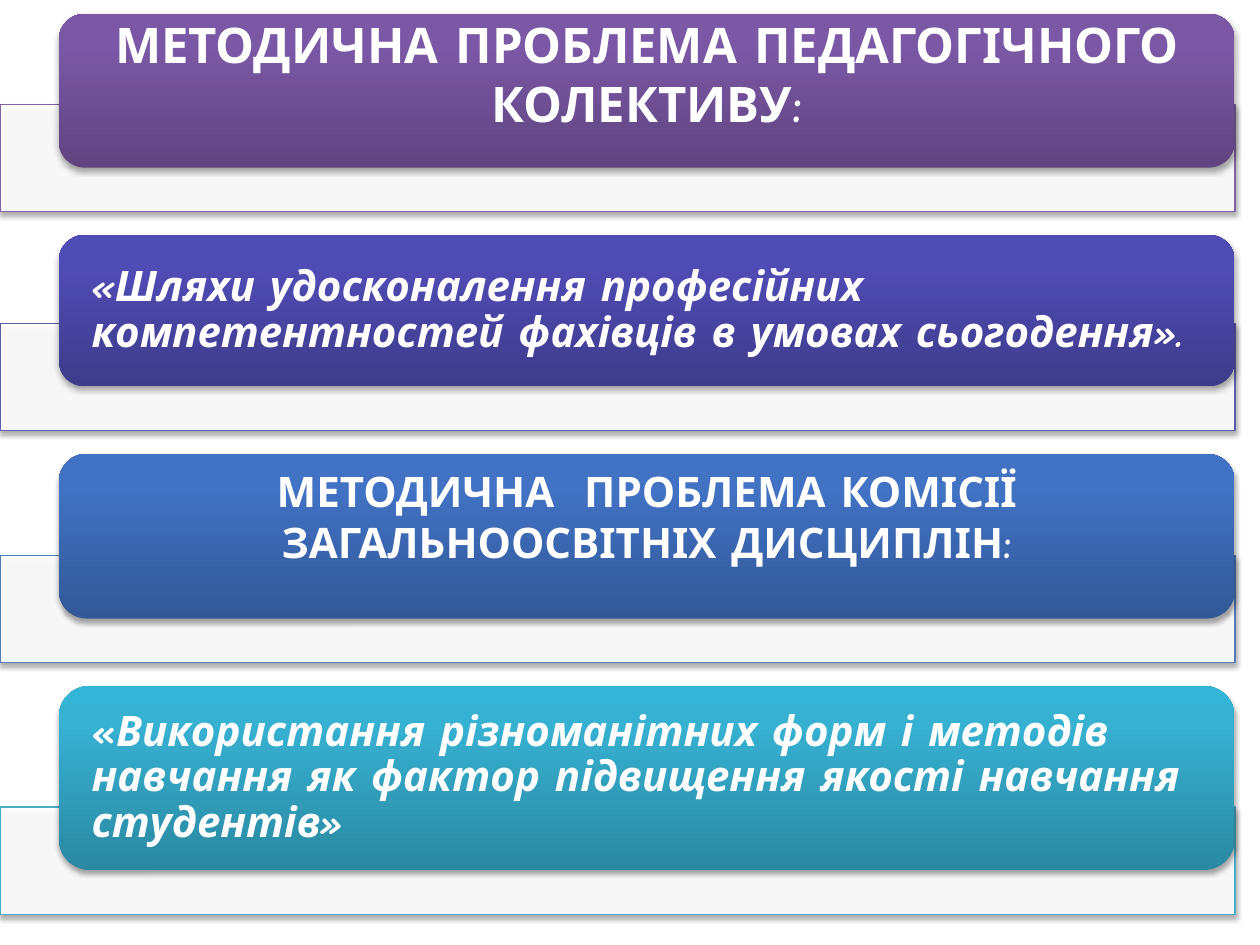
"""Build a slide of four stacked colour cards stating two methodical problems."""
from lxml.etree import SubElement
from pptx import Presentation
from pptx.dml.color import RGBColor
from pptx.enum.shapes import MSO_SHAPE
from pptx.enum.text import MSO_ANCHOR, MSO_AUTO_SIZE, PP_ALIGN
from pptx.oxml.ns import qn
from pptx.util import Cm, Pt

COLOURS = {
    "white": "FFFFFF",
    "shadow": "000000",
    "violet": ("8064A2", "5F4480", "7B58A6", "7C57A8"),
    "indigo": ("5F5BAE", "3E3B8B", "504CB5", "4F4BB8"),
    "blue": ("537ABA", "325897", "4172C4", "3F72C7"),
    "teal": ("4BACC6", "2A88A2", "37B1D2", "34B4D6"),
}
CARDS = [
    {"colour": "violet", "height": 3.1, "size": 28, "heading": True, "bottom": 0.7,
     "spans": [("МЕТОДИЧНА ПРОБЛЕМА ПЕДАГОГІЧНОГО КОЛЕКТИВУ:", False)]},
    {"colour": "indigo", "height": 3.05, "size": 24, "heading": False, "bottom": 0,
     "spans": [("«Шляхи удосконалення професійних компетентностей фахівців "
                "в умовах сьогодення».", True)]},
    {"colour": "blue", "height": 3.32, "size": 24, "heading": True, "bottom": 0.8,
     "spans": [("МЕТОДИЧНА  ПРОБЛЕМА КОМІСІЇ ЗАГАЛЬНООСВІТНІХ ДИСЦИПЛІН:", False)]},
    {"colour": "teal", "height": 3.71, "size": 24, "heading": False, "bottom": 0,
     "spans": [("«", False),
               ("Використання різноманітних форм і методів навчання як фактор "
                "підвищення якості навчання студентів»", True)]},
]
FIRST_TOP, CARD_LEFT, CARD_WIDTH = 0.28, 1.19, 23.7
BAND_WIDTH, BAND_HEIGHT, OVERLAP = 24.9, 2.16, 1.27
CARD_GAP = 1.36
TEXT_INSET, CORNER_INSET = 0.66, 0.049


def add_colour(parent, colour, alpha=None):
    element = SubElement(parent, qn("a:srgbClr"), val=colour)
    if alpha:
        SubElement(element, qn("a:alpha"), val=str(alpha * 1000))


def add_shadow(shape):
    shape.shadow.inherit = False
    effects = shape._element.spPr.find(qn("a:effectLst"))
    shadow = SubElement(effects, qn("a:outerShdw"), blurRad=str(Pt(3.1)),
                        dist=str(Pt(1.8)), dir="5400000", rotWithShape="0")
    add_colour(shadow, COLOURS["shadow"], 35)


def add_band(page, top, colour):
    band = page.shapes.add_shape(MSO_SHAPE.RECTANGLE, Cm(0), Cm(top),
                                 Cm(BAND_WIDTH), Cm(BAND_HEIGHT))
    band.fill.solid()
    band.fill.fore_color.rgb = RGBColor.from_string(COLOURS["white"])
    white = band._element.spPr.find(qn("a:solidFill"))[0]
    SubElement(white, qn("a:alpha"), val="90000")
    band.line.color.rgb = RGBColor.from_string(colour)
    band.line.width = Pt(0.75)
    add_shadow(band)


def add_card(page, top, height, shades):
    card = page.shapes.add_shape(MSO_SHAPE.ROUNDED_RECTANGLE, Cm(CARD_LEFT), Cm(top),
                                 Cm(CARD_WIDTH), Cm(height))
    card.fill.gradient()
    card.fill.gradient_angle = 90
    stops = card._element.spPr.find(qn("a:gradFill")).find(qn("a:gsLst"))
    stops.clear()
    for position, shade in zip((0, 80, 100), shades):
        add_colour(SubElement(stops, qn("a:gs"), pos=str(position * 1000)), shade)
    card.line.fill.background()
    add_shadow(card)
    return card


def write_text(box, item, inset):
    frame = box.text_frame
    frame.word_wrap = True
    frame.auto_size = MSO_AUTO_SIZE.NONE
    frame.vertical_anchor = MSO_ANCHOR.MIDDLE
    frame.margin_left = frame.margin_right = Cm(inset)
    frame.margin_top, frame.margin_bottom = Cm(0), Cm(item["bottom"])
    para = frame.paragraphs[0]
    para.alignment = PP_ALIGN.CENTER if item["heading"] else PP_ALIGN.LEFT
    para.line_spacing = 1.0 if item["heading"] else 0.9
    para.font.name = "Comic Neue"
    para.font.size = Pt(item["size"])
    para.font.bold = True
    para.font.color.rgb = RGBColor.from_string(COLOURS["white"])
    for text, italic in item["spans"]:
        span = para.add_run()
        span.text = text
        span.font.italic = italic


def main():
    deck = Presentation()
    deck.slide_width, deck.slide_height = Cm(25.4), Cm(19.05)
    page = deck.slides.add_slide(deck.slide_layouts[5])
    title = page.shapes.title
    top = FIRST_TOP
    for index, item in enumerate(CARDS):
        line, *shades = COLOURS[item["colour"]]
        height = item["height"]
        add_band(page, top + height - OVERLAP, line)
        card = add_card(page, top, height, shades)
        if index == 0:
            title.left, title.top = card.left, card.top
            title.width, title.height = card.width, card.height
            card._element.addnext(title._element)
            write_text(title, item, TEXT_INSET)
        else:
            write_text(card, item, TEXT_INSET - CORNER_INSET * height)
        top += height + CARD_GAP
    deck.save("out.pptx")


if __name__ == "__main__":
    main()
